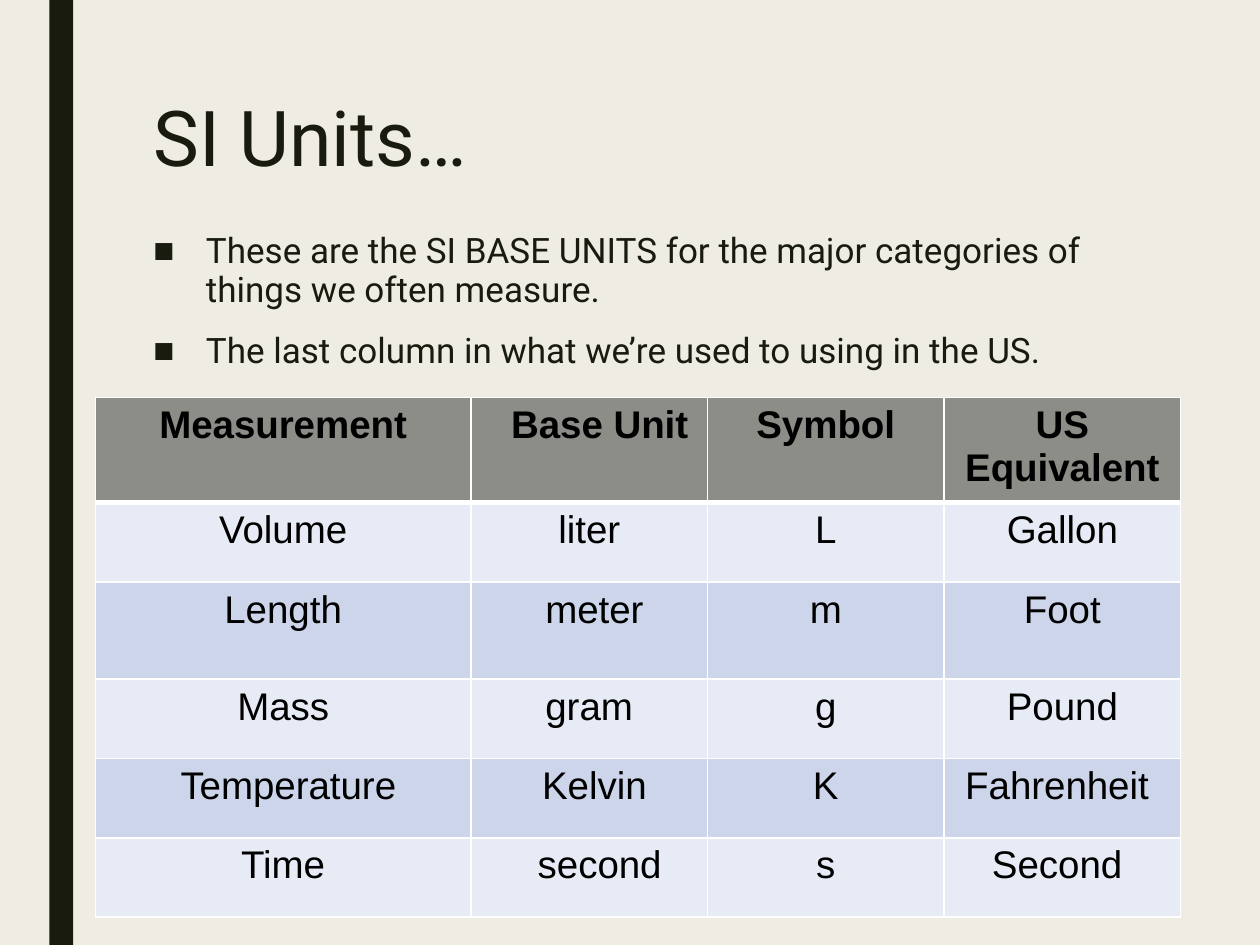
"""Build the SI Units slide with its bullets and table of base units."""
from dataclasses import dataclass

from lxml import etree
from pptx import Presentation
from pptx.dml.color import RGBColor
from pptx.enum.shapes import MSO_SHAPE
from pptx.enum.text import MSO_ANCHOR, MSO_AUTO_SIZE, PP_ALIGN
from pptx.oxml.ns import qn
from pptx.util import Pt

RECT = MSO_SHAPE.RECTANGLE
TOP = MSO_ANCHOR.TOP
NO_FIT = MSO_AUTO_SIZE.NONE
LEFT, CENTER = PP_ALIGN.LEFT, PP_ALIGN.CENTER
TITLE_ONLY = 5
INK, PAPER, WHITE, BLACK = "191B0E", "EFEDE3", "FFFFFF", "000000"
HEADER, BANDS = "8C8D86", ("CCD5EA", "E7EBF5")
MARGIN = 7.2


@dataclass
class Entry:
    text: str
    nudge: float = 0


ROWS = [
    [Entry("Measurement"), Entry("Base Unit", 6), Entry("Symbol"), Entry("US Equivalent")],
    [Entry("Volume"), Entry("liter"), Entry("L"), Entry("Gallon")],
    [Entry("Length"), Entry("meter", 3), Entry("m"), Entry("Foot")],
    [Entry("Mass"), Entry("gram"), Entry("g"), Entry("Pound")],
    [Entry("Temperature", 3), Entry("Kelvin", 3), Entry("K"), Entry("Fahrenheit", -3)],
    [Entry("Time"), Entry("second", 6), Entry("s"), Entry("Second", -3)],
]
COL_WIDTHS = [214.6, 135.2, 135.2, 135.2]
ROW_HEIGHTS = [55.4, 45.4, 55.4, 45.4, 45.4, 45.4]
BULLETS = [
    "These are the SI BASE UNITS for the major categories of things we often measure.",
    "The last column in what we’re used to using in the US.",
]


def rgb(color: str) -> RGBColor:
    return RGBColor.from_string(color)


def add_run(p, text: str, size: float, font: str, color: str, bold: bool = False) -> None:
    r = p.add_run()
    r.text = text
    r.font.size = Pt(size)
    r.font.name = font
    r.font.bold = bold
    r.font.color.rgb = rgb(color)


def add_bar(s) -> None:
    sp = s.shapes.add_shape(RECT, Pt(28.2), 0, Pt(13.6), Pt(540))
    sp.shadow.inherit = False
    sp.fill.solid()
    sp.fill.fore_color.rgb = rgb(INK)
    sp.line.fill.background()


def set_title(s, text: str) -> None:
    sp = s.shapes.title
    sp.left, sp.top, sp.width, sp.height = Pt(80.6), Pt(54), Pt(567.4), Pt(116.6)
    tf = sp.text_frame
    tf.vertical_anchor = TOP
    tf.auto_size = NO_FIT
    p = tf.paragraphs[0]
    p.alignment = LEFT
    p.line_spacing = 0.89
    add_run(p, text, 44, "Roboto", INK)


def add_bullets(s, texts: list[str]) -> None:
    tf = s.shapes.add_textbox(Pt(80.6), Pt(128.9), Pt(567.4), Pt(282)).text_frame
    tf.word_wrap = True
    for i, text in enumerate(texts):
        p = tf.add_paragraph() if i else tf.paragraphs[0]
        p.line_spacing = 0.94
        p.space_before, p.space_after = Pt(10), Pt(2)
        pPr = p._p.get_or_add_pPr()
        pPr.set("marL", str(Pt(30)))
        pPr.set("indent", str(-Pt(30)))
        etree.SubElement(pPr, qn("a:buFont"), typeface="Arial")
        etree.SubElement(pPr, qn("a:buChar"), char="■")
        add_run(p, text, 20, "Roboto", INK)


def set_border(cell, side: str, width: float) -> None:
    tcPr = cell._tc.get_or_add_tcPr()
    ln = etree.SubElement(tcPr, qn(f"a:ln{side}"), w=str(Pt(width)))
    fill = etree.SubElement(ln, qn("a:solidFill"))
    etree.SubElement(fill, qn("a:srgbClr"), val=WHITE)


def fill_cell(cell, entry: Entry, row: int) -> None:
    thick = {0: "B", 1: "T"}.get(row)
    for side in "LRTB":
        set_border(cell, side, 3 if side == thick else 1)
    cell.fill.solid()
    cell.fill.fore_color.rgb = rgb(BANDS[row % 2] if row else HEADER)
    cell.margin_left = Pt(MARGIN + entry.nudge)
    cell.margin_right = Pt(MARGIN - entry.nudge)
    p = cell.text_frame.paragraphs[0]
    p.alignment = CENTER
    add_run(p, entry.text, 22, "Arial", BLACK, bold=row == 0)


def add_units_table(s) -> None:
    frame = s.shapes.add_table(len(ROWS), len(COL_WIDTHS), Pt(54.5), Pt(227.2),
                               Pt(sum(COL_WIDTHS)), Pt(sum(ROW_HEIGHTS)))
    table = frame.table
    for col, width in zip(table.columns, COL_WIDTHS):
        col.width = Pt(width)
    for i, (entries, height) in enumerate(zip(ROWS, ROW_HEIGHTS)):
        table.rows[i].height = Pt(height)
        for j, entry in enumerate(entries):
            fill_cell(table.cell(i, j), entry, i)


def main() -> None:
    prs = Presentation()
    prs.slide_width, prs.slide_height = Pt(720), Pt(540)
    s = prs.slides.add_slide(prs.slide_layouts[TITLE_ONLY])
    s.background.fill.solid()
    s.background.fill.fore_color.rgb = rgb(PAPER)
    add_bar(s)
    set_title(s, "SI Units…")
    add_bullets(s, BULLETS)
    add_units_table(s)
    prs.save("out.pptx")


if __name__ == "__main__":
    main()
